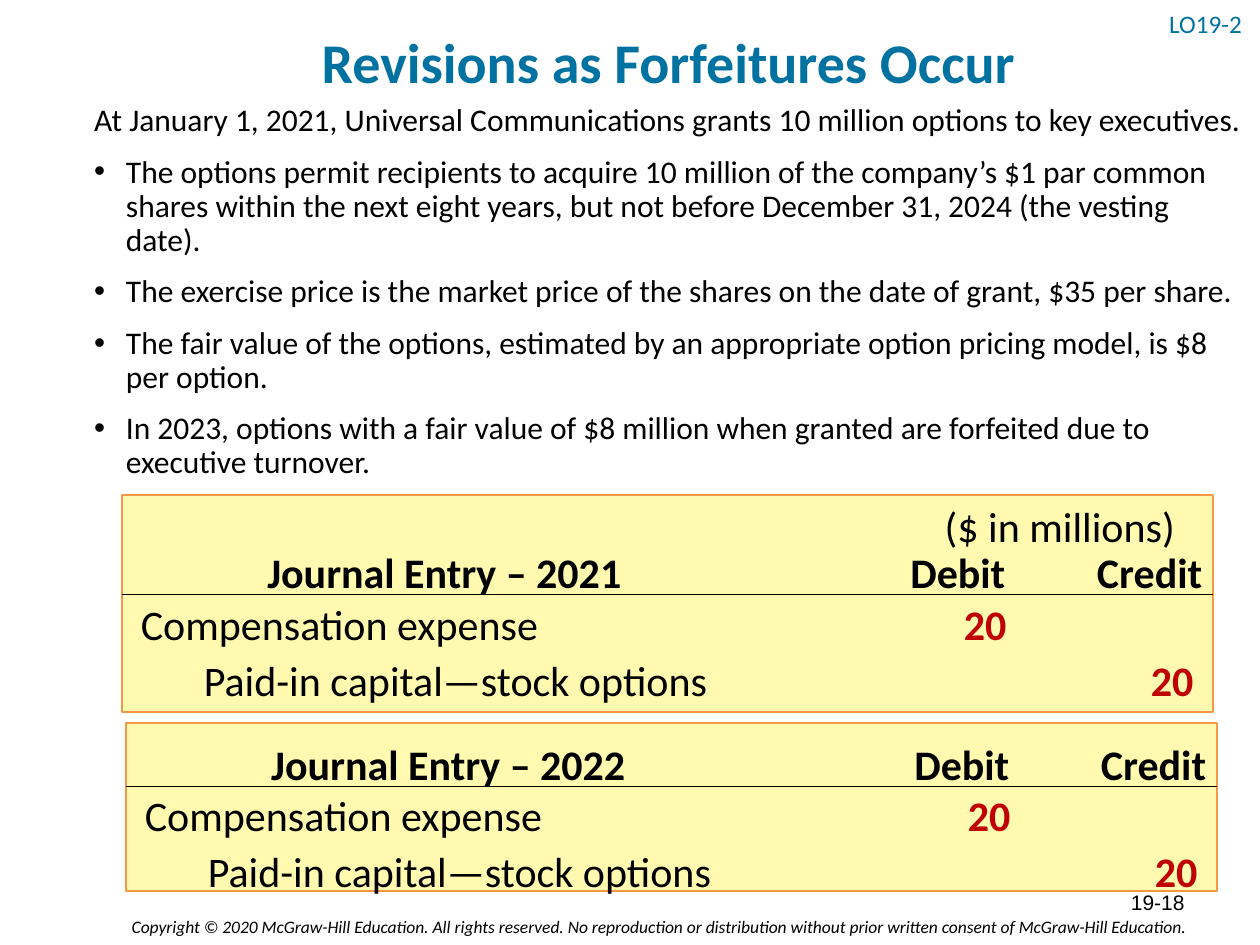
from dataclasses import dataclass
from typing import Optional

from lxml.etree import SubElement
from pptx import Presentation
from pptx.dml.color import RGBColor
from pptx.enum.shapes import MSO_CONNECTOR, MSO_SHAPE
from pptx.enum.text import MSO_ANCHOR, PP_ALIGN
from pptx.oxml.ns import qn
from pptx.util import Cm, Pt

COLOURS = {
    "blue": "0072A2",
    "black": "000000",
    "red": "C00000",
    "cream": "FFFAB0",
    "orange": "F79646",
}
LEFT, CENTER, RIGHT = PP_ALIGN.LEFT, PP_ALIGN.CENTER, PP_ALIGN.RIGHT
TOP, MIDDLE = MSO_ANCHOR.TOP, MSO_ANCHOR.MIDDLE


@dataclass
class Style:
    size: float = 24
    colour: str = "black"
    bold: bool = False
    italic: bool = False
    name: str = "Calibri"
    align: PP_ALIGN = LEFT
    anchor: MSO_ANCHOR = TOP
    spacing: Optional[float] = None


@dataclass
class Label:
    text: str
    left: float
    top: float
    width: float
    height: float
    style: Style
    indent: float = 0


@dataclass
class Entry:
    heading: str
    left: float
    top: float
    height: float
    rule: float  # height on the page of the line under the headings


TITLE = Style(32, "blue", bold=True, align=CENTER, anchor=MIDDLE, spacing=1.1)
BODY = Style(18, spacing=0.9)
HEADING = Style(bold=True, align=CENTER)
UNITS = Style(align=CENTER)
ACCOUNT = Style()
AMOUNT = Style(colour="red", bold=True, align=RIGHT)
OBJECTIVE = Style(14.4, "blue", anchor=MIDDLE, spacing=0.7)
NUMBER = Style(12, name="Arial", align=RIGHT, anchor=MIDDLE)
COPYRIGHT = Style(10, italic=True, align=RIGHT)

PANEL_WIDTH = 22
HEADING_HEIGHT, ROW_HEIGHT = 1.27, 1.12
HEADING_RISE, FIRST_ROW, SECOND_ROW = -1.09, -0.05, 1.07

INTRO = ("At January 1, 2021, Universal Communications grants 10 million "
         "options to key executives.")
TERMS = [
    "The options permit recipients to acquire 10 million of the company’s $1 par "
    "common shares within the next eight years, but not before December 31, 2024 "
    "(the vesting date).",
    "The exercise price is the market price of the shares on the date of grant, "
    "$35 per share.",
    "The fair value of the options, estimated by an appropriate option pricing "
    "model, is $8 per option.",
    "In 2023, options with a fair value of $8 million when granted are forfeited "
    "due to executive turnover.",
]
ENTRIES = [
    Entry("Journal Entry – 2021", 2.46, 9.98, 4.37, 11.99),
    Entry("Journal Entry – 2022", 2.54, 14.58, 3.38, 15.85),
]
LABELS = [
    Label("Revisions as Forfeitures Occur", 1.63, 0.03, 23.7, 2.29, TITLE),
    Label("($ in millions)", 18.75, 9.96, 5.23, HEADING_HEIGHT, UNITS),
    Label("LO19-2", 23.32, 0.03, 2.06, 1.02, OBJECTIVE),
    Label("19-18", 18.21, 17.68, 5.92, 1.02, NUMBER),
    Label("Copyright © 2020 McGraw-Hill Education. All rights reserved. "
          "No reproduction or distribution without prior written consent of "
          "McGraw-Hill Education. ", 1.14, 18.34, 23.09, 0.69, COPYRIGHT),
]


def colour(name: str) -> RGBColor:
    return RGBColor.from_string(COLOURS[name])


def add_box(page, label: Label):
    box = page.shapes.add_textbox(Cm(label.left), Cm(label.top),
                                  Cm(label.width), Cm(label.height))
    box.text_frame.word_wrap = True
    box.text_frame.vertical_anchor = label.style.anchor
    return box


def write(paragraph, text: str, style: Style) -> None:
    paragraph.alignment = style.align
    if style.spacing:
        paragraph.line_spacing = style.spacing
    span = paragraph.add_run()
    span.text = text
    formats = {"name": style.name, "size": Pt(style.size),
               "bold": style.bold, "italic": style.italic}
    for attribute, value in formats.items():
        setattr(span.font, attribute, value)
    span.font.color.rgb = colour(style.colour)


def add_label(page, label: Label) -> None:
    paragraph = add_box(page, label).text_frame.paragraphs[0]
    if label.indent:
        paragraph.level = 1
        properties = paragraph._p.get_or_add_pPr()
        properties.set("marL", str(Cm(label.indent)))
        properties.set("indent", "0")
    write(paragraph, label.text, label.style)


def add_terms(page) -> None:
    frame = add_box(page, Label("", 1.65, 1.98, 23.7, 8.31, BODY)).text_frame
    write(frame.paragraphs[0], INTRO, BODY)
    for term in TERMS:
        paragraph = frame.add_paragraph()
        paragraph.space_before = Pt(10)
        write(paragraph, term, BODY)
        properties = paragraph._p.get_or_add_pPr()
        properties.set("marL", str(Cm(0.64)))
        properties.set("indent", str(-Cm(0.64)))
        SubElement(properties, qn("a:buFont")).set("typeface", "Arial")
        SubElement(properties, qn("a:buChar")).set("char", "•")


def add_entry(page, entry: Entry) -> None:
    # Panel
    panel = page.shapes.add_shape(MSO_SHAPE.RECTANGLE, Cm(entry.left), Cm(entry.top),
                                  Cm(PANEL_WIDTH), Cm(entry.height))
    panel.shadow.inherit = False
    panel.fill.solid()
    panel.fill.fore_color.rgb = colour("cream")
    panel.line.color.rgb = colour("orange")
    panel.line.width = Pt(1)

    # Line under the headings
    rule = page.shapes.add_connector(
        MSO_CONNECTOR.STRAIGHT, Cm(entry.left), Cm(entry.rule),
        Cm(entry.left + PANEL_WIDTH), Cm(entry.rule))
    rule.line.color.rgb = colour("black")
    rule.line.width = Pt(0.5)
    SubElement(rule._element.spPr, qn("a:effectLst"))

    # Headings: text, offset from the panel, width
    for text, offset, width in [(entry.heading, 0, 13), ("Debit", 15.06, 3.58),
                                ("Credit", 19.23, 2.97)]:
        add_label(page, Label(text, entry.left + offset, entry.rule + HEADING_RISE,
                              width, HEADING_HEIGHT, HEADING))

    # Accounts and amounts: text, offset, row, width, style, indent
    for text, offset, row, width, style, indent in [
        ("Compensation expense", 0.13, FIRST_ROW, 13.13, ACCOUNT, 0),
        ("20", 14.83, FIRST_ROW, 3.25, AMOUNT, 0),
        ("Paid-in capital—stock options", 0.13, SECOND_ROW, 13.13, ACCOUNT, 1.27),
        ("20", 18.57, SECOND_ROW, 3.28, AMOUNT, 0),
    ]:
        add_label(page, Label(text, entry.left + offset, entry.rule + row,
                              width, ROW_HEIGHT, style, indent))


def main() -> None:
    deck = Presentation()
    deck.slide_width, deck.slide_height = Cm(25.4), Cm(19.05)
    page = deck.slides.add_slide(deck.slide_layouts[6])
    add_terms(page)
    for entry in ENTRIES:
        add_entry(page, entry)
    for label in LABELS:
        add_label(page, label)
    deck.save("out.pptx")


if __name__ == "__main__":
    main()
